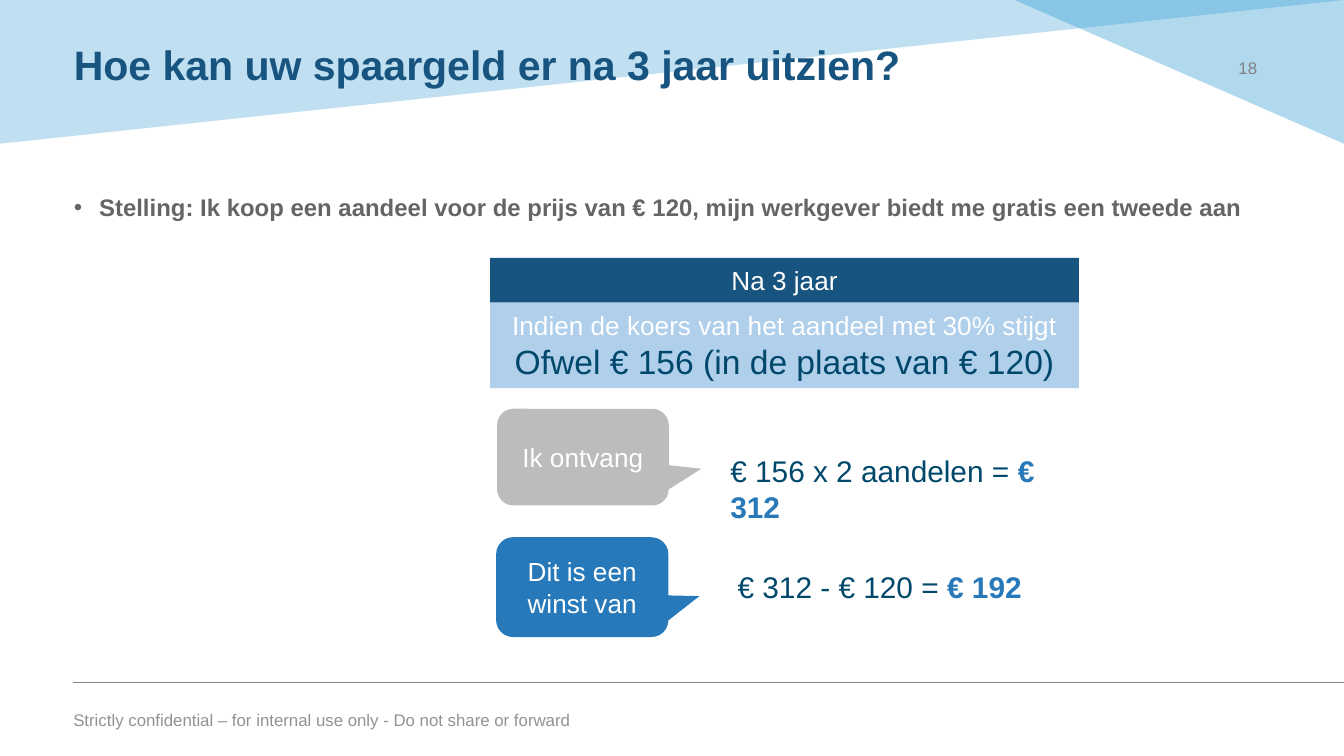
from lxml.etree import SubElement
from pptx import Presentation
from pptx.dml.color import RGBColor
from pptx.enum.shapes import MSO_CONNECTOR, MSO_SHAPE
from pptx.enum.text import MSO_ANCHOR, MSO_AUTO_SIZE, PP_ALIGN
from pptx.oxml.ns import qn
from pptx.util import Pt

COLORS = {
    "navy": "185480", "sky": "2897D1", "pale": "AFCFEB", "blue": "2779BA",
    "silver": "BCBCBC", "ink": "00486B", "body": "646567", "rule": "818284",
    "footer": "929292", "white": "FFFFFF",
}
FONT = "Arial"
WIDTH, HEIGHT = 720, 405


def rgb(name):
    return RGBColor.from_string(COLORS[name])


def place(shape, box):
    shape.left, shape.top, shape.width, shape.height = (Pt(v) for v in box)


def add_run(paragraph, text, size, color, bold=False):
    run = paragraph.add_run()
    run.text = text
    run.font.name = FONT
    run.font.size = Pt(size)
    run.font.bold = bold
    run.font.color.rgb = rgb(color)


def prepare_text(shape, anchor=MSO_ANCHOR.TOP, align=PP_ALIGN.LEFT):
    """Set up a wrapping frame and return its first paragraph."""
    frame = shape.text_frame
    frame.word_wrap = True
    frame.auto_size = MSO_AUTO_SIZE.NONE
    frame.vertical_anchor = anchor
    paragraph = frame.paragraphs[0]
    paragraph.alignment = align
    return paragraph


def add_label(slide, box, anchor=MSO_ANCHOR.TOP):
    label = slide.shapes.add_textbox(*(Pt(v) for v in box))
    return prepare_text(label, anchor)


def add_filled(slide, preset, box, color):
    shape = slide.shapes.add_shape(preset, *(Pt(v) for v in box))
    shape.shadow.inherit = False
    shape.fill.solid()
    shape.fill.fore_color.rgb = rgb(color)
    shape.line.fill.background()
    return shape


def add_corner(slide, box, opacity, mirrored=False):
    corner = add_filled(slide, MSO_SHAPE.RIGHT_TRIANGLE, box, "sky")
    corner.rotation = 180
    if mirrored:
        corner._element.spPr.find(qn("a:xfrm")).set("flipH", "1")
    tint = corner._element.spPr.find(qn("a:solidFill"))[0]
    SubElement(tint, qn("a:alpha"), val=str(opacity * 1000))


def add_footer(slide, box):
    left, top, width, height = box
    rule = slide.shapes.add_connector(
        MSO_CONNECTOR.STRAIGHT, Pt(left + 7.2), Pt(top), Pt(WIDTH), Pt(top))
    rule.line.color.rgb = rgb("rule")
    rule.line.width = Pt(0.5)
    SubElement(rule._element.spPr, qn("a:effectLst"))
    notice = add_label(slide, (left, top + 10.8, width, height - 10.8))
    add_run(notice,
            "Strictly confidential – for internal use only - Do not share or forward",
            9, "footer")


def add_page_number(slide, box):
    number = add_label(slide, box, MSO_ANCHOR.MIDDLE)
    add_run(number, "18", 9, "rule")


def fill_title(slide, box):
    title = slide.shapes.title
    place(title, box)
    slide.shapes._spTree.append(title._element)  # in front of the corners
    heading = prepare_text(title, MSO_ANCHOR.MIDDLE)
    heading.line_spacing = 0.9
    add_run(heading, "Hoe kan uw spaargeld er na 3 jaar uitzien?", 22, "navy", True)


def fill_statement(slide, box):
    body = slide.placeholders[1]
    place(body, box)
    statement = prepare_text(body)
    properties = statement._p.get_or_add_pPr()
    properties.set("marL", str(Pt(13.5)))
    properties.set("indent", str(-Pt(13.5)))
    statement.line_spacing = 1.1
    statement.space_before = Pt(0)
    statement.space_after = Pt(2)
    SubElement(properties, qn("a:buChar"), char="•")
    add_run(statement,
            "Stelling: Ik koop een aandeel voor de prijs van € 120, "
            "mijn werkgever biedt me gratis een tweede aan", 12.8, "body", True)


def add_scenario(slide, box):
    left, top, width, height = box
    header_height = 24
    header = add_filled(slide, MSO_SHAPE.RECTANGLE,
                        (left, top, width, header_height), "navy")
    add_run(prepare_text(header, align=PP_ALIGN.CENTER), "Na 3 jaar", 14, "white")
    condition = add_filled(
        slide, MSO_SHAPE.RECTANGLE,
        (left, top + header_height, width, height - header_height), "pale")
    paragraph = prepare_text(condition, align=PP_ALIGN.CENTER)
    add_run(paragraph, "Indien de koers van het aandeel met 30% stijgt", 14, "white")
    paragraph.add_line_break()
    add_run(paragraph, "Ofwel € 156 (in de plaats van € 120)", 18, "ink")


def add_outcome(slide, box, color, caption, pointer, sum_at, sum_text, result):
    """A callout with its sum to the right of it."""
    callout = add_filled(slide, MSO_SHAPE.ROUNDED_RECTANGULAR_CALLOUT, box, color)
    for index, value in enumerate((*pointer, 0.17)):
        callout.adjustments[index] = value
    add_run(prepare_text(callout, MSO_ANCHOR.MIDDLE, PP_ALIGN.CENTER),
            caption, 14, "white")
    calculation = add_label(slide, (*sum_at, 204.5, 26.6))
    add_run(calculation, sum_text, 16, "ink")
    add_run(calculation, result, 16, "blue", True)


def main():
    presentation = Presentation()
    presentation.slide_width, presentation.slide_height = Pt(WIDTH), Pt(HEIGHT)
    slide = presentation.slides.add_slide(presentation.slide_layouts[1])

    add_corner(slide, (543.6, 0, 176.4, 77), 36)
    add_corner(slide, (0, 0, WIDTH, 77), 29, mirrored=True)
    add_footer(slide, (32.2, 365.6, 490, 36))
    fill_title(slide, (32.4, 15.8, 612.7, 40.3))
    add_page_number(slide, (656.4, 15.4, 38.9, 41.8))
    fill_statement(slide, (32.4, 98, 673.2, 29.5))
    add_scenario(slide, (262.6, 138.2, 315.4, 69.8))
    add_outcome(slide, (266.3, 219, 92, 51.8), "silver", "Ik ontvang",
                (0.69, 0.12), (384.2, 239), "€ 156 x 2 aandelen = ", "€ 312")
    add_outcome(slide, (265.8, 287.8, 92.3, 53.5), "blue", "Dit is een winst van",
                (0.68, 0.09), (388.1, 301), "€ 312 - € 120 = ", "€ 192")

    presentation.save("out.pptx")


if __name__ == "__main__":
    main()
